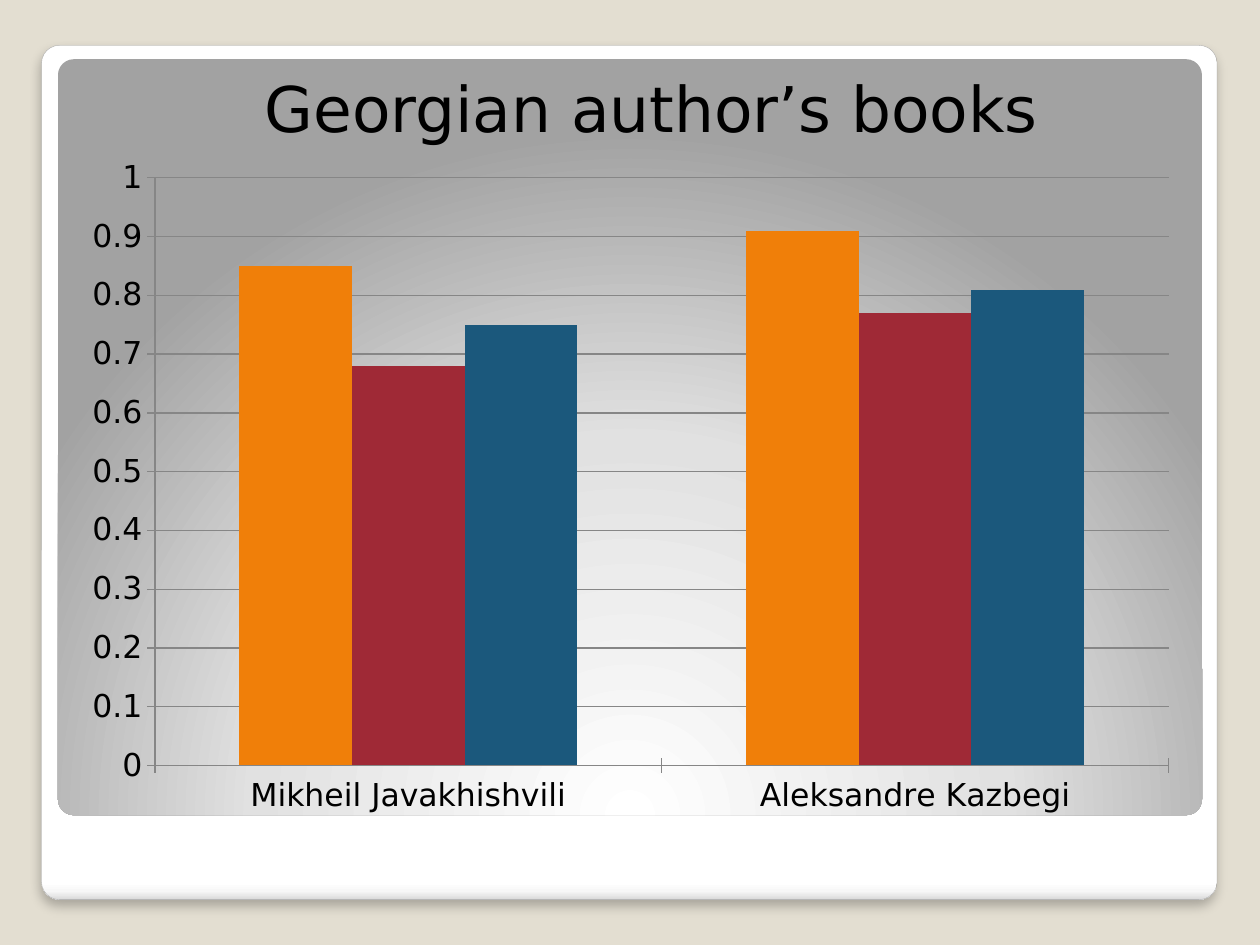
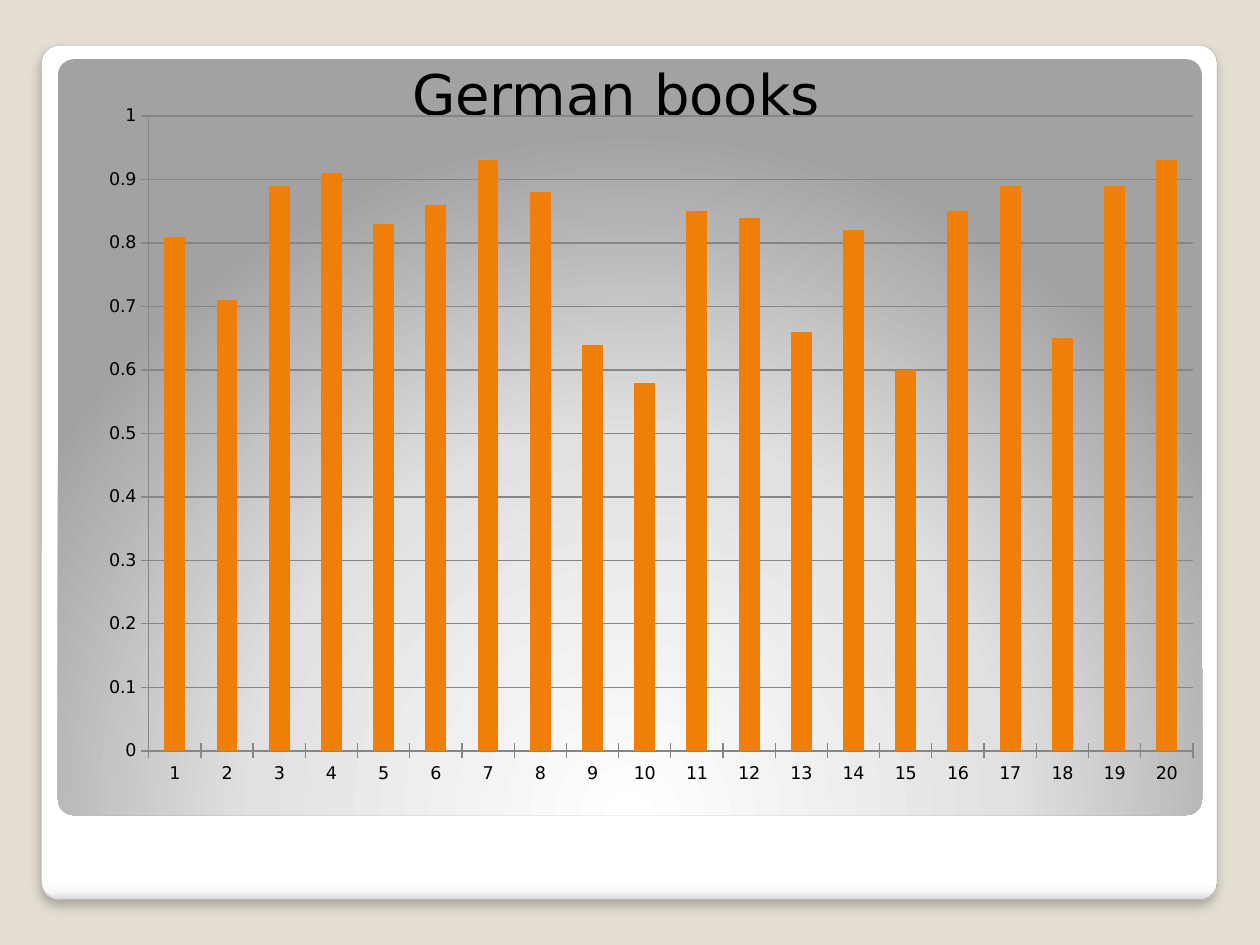
from dataclasses import dataclass

from pptx import Presentation
from pptx.chart import data as chart_data
from pptx.dml import color
from pptx.enum import chart as chart_enum, shapes, text
from pptx.oxml import ns, parse_xml
from pptx.util import Inches, Pt


@dataclass(frozen=True)
class Theme:
    """Colours, typeface and measures shared by the slides."""

    font: str = "DejaVu Sans"
    ink: str = "000000"
    background: str = "E3DED1"
    border: str = "A4A4A4"
    grid: str = "868686"
    series: tuple = ("F07F09", "9F2936", "1B587C")
    card: tuple = ((0, "FFFFFF"), (98, "FFFFFF"), (99, "F7F7F7"), (100, "DADADA"))
    panel: tuple = ((0, "FFFFFF"), (55, "E1E1E1"), (100, "A2A2A2"))
    corner: float = 0.021
    line_width: float = 0.75


THEME = Theme()
DOWNWARD = '<a:lin ang="5400000" scaled="0"/>'
FROM_BELOW = ('<a:path path="circle"><a:fillToRect l="50000" t="175000" '
              'r="50000" b="-75000"/></a:path>')


def rgb(value):
    """Return a colour for a hex string."""
    return color.RGBColor.from_string(value)


def inches(box):
    """Turn left, top, width and height into lengths."""
    return [Inches(length) for length in box]


def style_font(font, size):
    """Apply the theme typeface and ink at a size."""
    font.name, font.size = THEME.font, Pt(size)
    font.color.rgb = rgb(THEME.ink)


def add_rounded_panel(slide, box, stops, direction):
    """Add a rounded rectangle with a gradient fill."""
    shape = slide.shapes.add_shape(shapes.MSO_SHAPE.ROUNDED_RECTANGLE, *inches(box))
    shape.adjustments[0] = THEME.corner
    shape.shadow.inherit = False
    shape.line.fill.background()
    stop_xml = "".join(
        f'<a:gs pos="{position * 1000}"><a:srgbClr val="{value}"/></a:gs>'
        for position, value in stops)
    gradient = parse_xml(f'<a:gradFill {ns.nsdecls("a")} rotWithShape="1">'
                         f'<a:gsLst>{stop_xml}</a:gsLst>{direction}</a:gradFill>')
    shape.element.spPr.find(ns.qn("a:prstGeom")).addnext(gradient)
    return shape


def add_soft_shadow(shape):
    """Give a shape a faint shadow below it."""
    shadow = parse_xml(
        f'<a:outerShdw {ns.nsdecls("a")} blurRad="{Pt(6)}" dist="{Pt(4)}" '
        'dir="5400000" algn="tl" rotWithShape="0"><a:srgbClr val="000000">'
        '<a:alpha val="25000"/></a:srgbClr></a:outerShdw>')
    shape.element.spPr.find(ns.qn("a:effectLst")).append(shadow)


def decorate_layout(layout, slide):
    """Put the background, card and panel on the layout."""
    layout.background.fill.solid()
    layout.background.fill.fore_color.rgb = rgb(THEME.background)
    card = add_rounded_panel(slide, (0.33, 0.36, 9.33, 6.78), THEME.card, DOWNWARD)
    card.line.color.rgb = rgb(THEME.border)
    card.line.width = Pt(0.16)
    add_soft_shadow(card)
    panel = add_rounded_panel(slide, (0.46, 0.47, 9.08, 6), THEME.panel, FROM_BELOW)
    for index, shape in enumerate((card, panel), start=2):
        layout.shapes.element.insert(index, shape.element)


def set_title(slide, words, box, size, wrap):
    """Fill, place and format the title placeholder."""
    title = slide.shapes.title
    title.left, title.top, title.width, title.height = inches(box)
    frame = title.text_frame
    frame.text = words
    frame.word_wrap = wrap
    frame.auto_size = text.MSO_AUTO_SIZE.SHAPE_TO_FIT_TEXT
    frame.vertical_anchor = text.MSO_ANCHOR.TOP
    paragraph = frame.paragraphs[0]
    paragraph.alignment = text.PP_ALIGN.LEFT
    style_font(paragraph.font, size)


def set_plot_area(chart, area):
    """Fix the inner plot area as fractions of the chart."""
    sizes = "".join(f'<c:{tag} val="{value}"/>' for tag, value in zip("xywh", area))
    layout = parse_xml(
        f'<c:layout {ns.nsdecls("c")}><c:manualLayout><c:layoutTarget val="inner"/>'
        f'<c:xMode val="edge"/><c:yMode val="edge"/>{sizes}</c:manualLayout></c:layout>')
    plot_area = chart.element.chart.plotArea
    for existing in plot_area.findall(ns.qn("c:layout")):
        plot_area.remove(existing)
    plot_area.insert(0, layout)


def style_line(line):
    """Draw an axis or grid line in the theme grey."""
    line.color.rgb = rgb(THEME.grid)
    line.width = Pt(THEME.line_width)


def add_column_chart(slide, box, area, size, categories, *columns):
    """Add a clustered column chart on a scale from 0 to 1."""
    data = chart_data.CategoryChartData()
    data.categories = categories
    for number, values in enumerate(columns, start=1):
        data.add_series(f"Series {number}", values)
    chart = slide.shapes.add_chart(
        chart_enum.XL_CHART_TYPE.COLUMN_CLUSTERED, *inches(box), data).chart
    chart.has_title = chart.has_legend = False
    style_font(chart.font, size)
    set_plot_area(chart, area)

    plot = chart.plots[0]
    plot.gap_width, plot.overlap, plot.vary_by_categories = 150, 0, False
    for series, fill_color in zip(plot.series, THEME.series):
        series.format.fill.solid()
        series.format.fill.fore_color.rgb = rgb(fill_color)

    for axis in (chart.category_axis, chart.value_axis):
        axis.major_tick_mark = chart_enum.XL_TICK_MARK.CROSS
        style_line(axis.format.line)
    scale = chart.value_axis
    scale.minimum_scale, scale.maximum_scale, scale.major_unit = 0, 1, 0.1
    scale.has_major_gridlines = True
    style_line(scale.major_gridlines.format.line)


def main():
    """Build both chart slides and save them."""
    presentation = Presentation()
    presentation.slide_width, presentation.slide_height = Inches(10), Inches(7.5)
    layout = presentation.slide_layouts.get_by_name("Title Only")
    georgian, german = (presentation.slides.add_slide(layout) for _ in range(2))
    decorate_layout(layout, georgian)

    set_title(georgian, "Georgian author’s books", (2, 0.5, 6.38, 0.71), 36, False)
    add_column_chart(
        georgian, (0.5, 1.17, 9, 5.5), (0.081, 0.044, 0.894, 0.848), 18,
        ("Mikheil Javakhishvili", "Aleksandre Kazbegi"),
        (0.85, 0.91), (0.68, 0.77), (0.75, 0.81))

    set_title(german, "German books", (3.17, 0.42, 3.5, 0.64), 32, True)
    add_column_chart(
        german, (0.67, 0.5, 8.95, 5.84), (0.057, 0.072, 0.926, 0.863), 10,
        [str(number) for number in range(1, 21)],
        (0.81, 0.71, 0.89, 0.91, 0.83, 0.86, 0.93, 0.88, 0.64, 0.58,
         0.85, 0.84, 0.66, 0.82, 0.6, 0.85, 0.89, 0.65, 0.89, 0.93))

    presentation.save("out.pptx")


if __name__ == "__main__":
    main()
